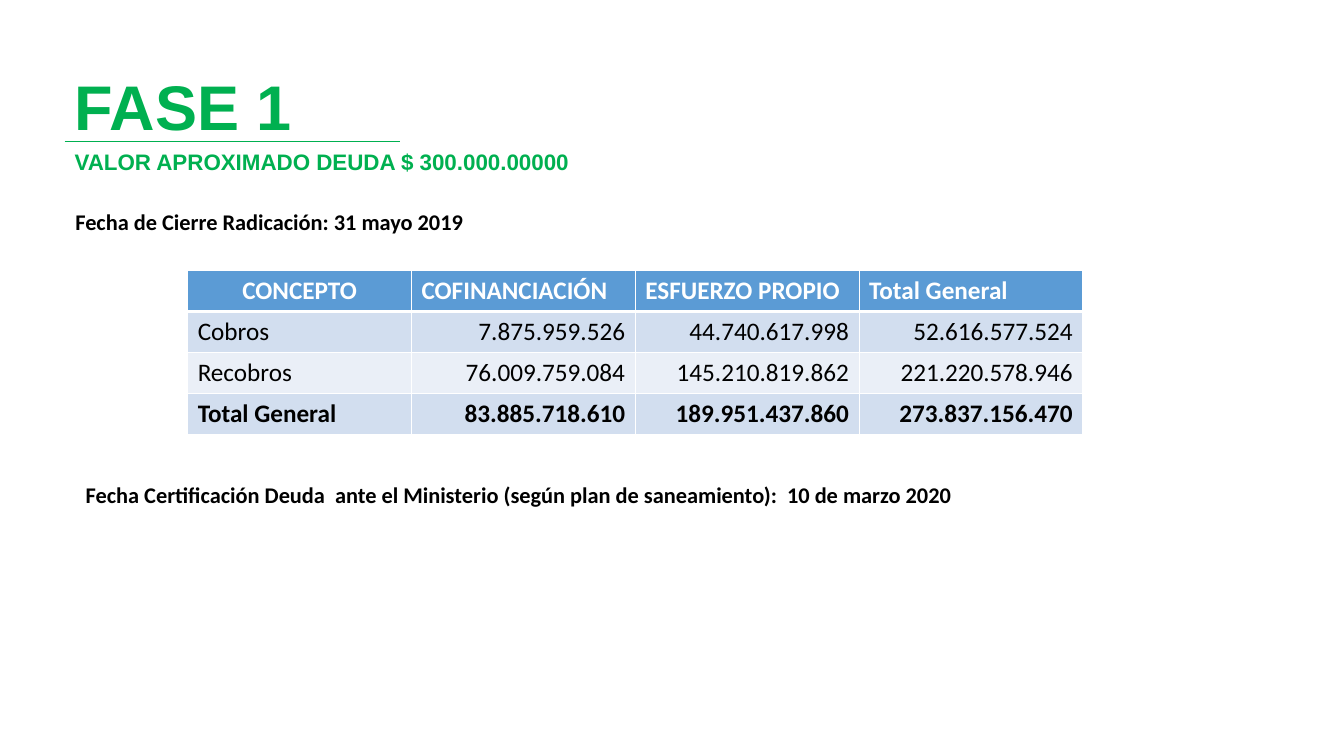
from lxml.etree import SubElement
from pptx import Presentation
from pptx.dml.color import RGBColor
from pptx.enum.shapes import MSO_CONNECTOR as CONN
from pptx.enum.text import MSO_ANCHOR as ANCHOR, MSO_AUTO_SIZE as FIT, PP_ALIGN as ALIGN
from pptx.oxml.ns import qn
from pptx.util import Cm, Pt

COLORS = {"green": "00B050", "black": "000000", "white": "FFFFFF",
          "header": "5B9BD5", "odd": "D2DEEF", "even": "EAEFF7"}

TITLE = "FASE 1"
# text, (left, top, width), font, colour
LINES = [
    ("Fecha de Cierre Radicación: 31 mayo 2019", (1.65, 5.13, 16.23), "Calibri", "black"),
    ("Fecha Certificación Deuda  ante el Ministerio (según plan de saneamiento):  10 de marzo 2020",
     (1.91, 12.01, 24.41), "Calibri", "black"),
    ("VALOR APROXIMADO DEUDA $ 300.000.00000", (1.63, 3.61, 13.34), "Arial", "green"),
]
DEBT = [
    ("CONCEPTO", "COFINANCIACIÓN", "ESFUERZO PROPIO", "Total General"),
    ("Cobros", "7.875.959.526", "44.740.617.998", "52.616.577.524"),
    ("Recobros", "76.009.759.084", "145.210.819.862", "221.220.578.946"),
    ("Total General", "83.885.718.610", "189.951.437.860", "273.837.156.470"),
]
COL_W, ROW_H = 5.64, 1.03


def rgb(name):
    return RGBColor.from_string(COLORS[name])


def write(tf, text, font="Calibri", size=16, color="black", bold=True, align=ALIGN.LEFT):
    p = tf.paragraphs[0]
    p.alignment = align
    r = p.add_run()
    r.text = text
    f = r.font
    f.name, f.size, f.bold = font, Pt(size), bold
    f.color.rgb = rgb(color)


def add_borders(cell, bottom):
    """White lines on all four sides; the bottom one has its own width."""
    tcPr = cell._tc.get_or_add_tcPr()
    for side, width in (("L", 1), ("R", 1), ("T", 1), ("B", bottom)):
        ln = SubElement(tcPr, qn(f"a:ln{side}"), w=str(Pt(width)))
        fill = SubElement(ln, qn("a:solidFill"))
        SubElement(fill, qn("a:srgbClr"), val=COLORS["white"])


def add_title(s):
    title = s.shapes.title
    title.left, title.top, title.width, title.height = Cm(1.63), Cm(1.57), Cm(26.16), Cm(2.18)
    tf = title.text_frame
    tf.auto_size, tf.vertical_anchor = FIT.NONE, ANCHOR.TOP
    write(tf, TITLE, font="Arial", size=45, color="green")


def add_rule(s):
    rule = s.shapes.add_connector(CONN.STRAIGHT, Cm(1.63), Cm(3.56), Cm(10.08), Cm(3.56))
    rule.line.color.rgb = rgb("green")
    rule.line.width = Pt(0.5)
    SubElement(rule._element.spPr, qn("a:effectLst"))


def add_debt_table(s):
    rows, cols = len(DEBT), len(DEBT[0])
    table = s.shapes.add_table(rows, cols, Cm(4.73), Cm(6.82),
                               Cm(COL_W * cols), Cm(ROW_H * rows)).table
    for i, row in enumerate(DEBT):
        header = i == 0
        for j, text in enumerate(row):
            cell = table.cell(i, j)
            add_borders(cell, bottom=3 if header else 1)
            cell.fill.solid()
            cell.fill.fore_color.rgb = rgb("header" if header else "odd" if i % 2 else "even")
            if header:
                align = ALIGN.LEFT if j else ALIGN.CENTER
            else:
                align = ALIGN.RIGHT if j else ALIGN.LEFT
            write(cell.text_frame, text, size=18, color="white" if header else "black",
                  bold=i in (0, rows - 1), align=align)


def main():
    prs = Presentation()
    prs.slide_width, prs.slide_height = Cm(33.87), Cm(19.05)
    s = prs.slides.add_slide(prs.slide_layouts.get_by_name("Title Only"))
    add_title(s)
    add_rule(s)
    add_debt_table(s)
    for text, (left, top, width), font, color in LINES:
        tf = s.shapes.add_textbox(Cm(left), Cm(top), Cm(width), Cm(0.94)).text_frame
        tf.word_wrap, tf.auto_size = True, FIT.SHAPE_TO_FIT_TEXT
        write(tf, text, font=font, color=color)
    prs.save("out.pptx")


if __name__ == "__main__":
    main()
